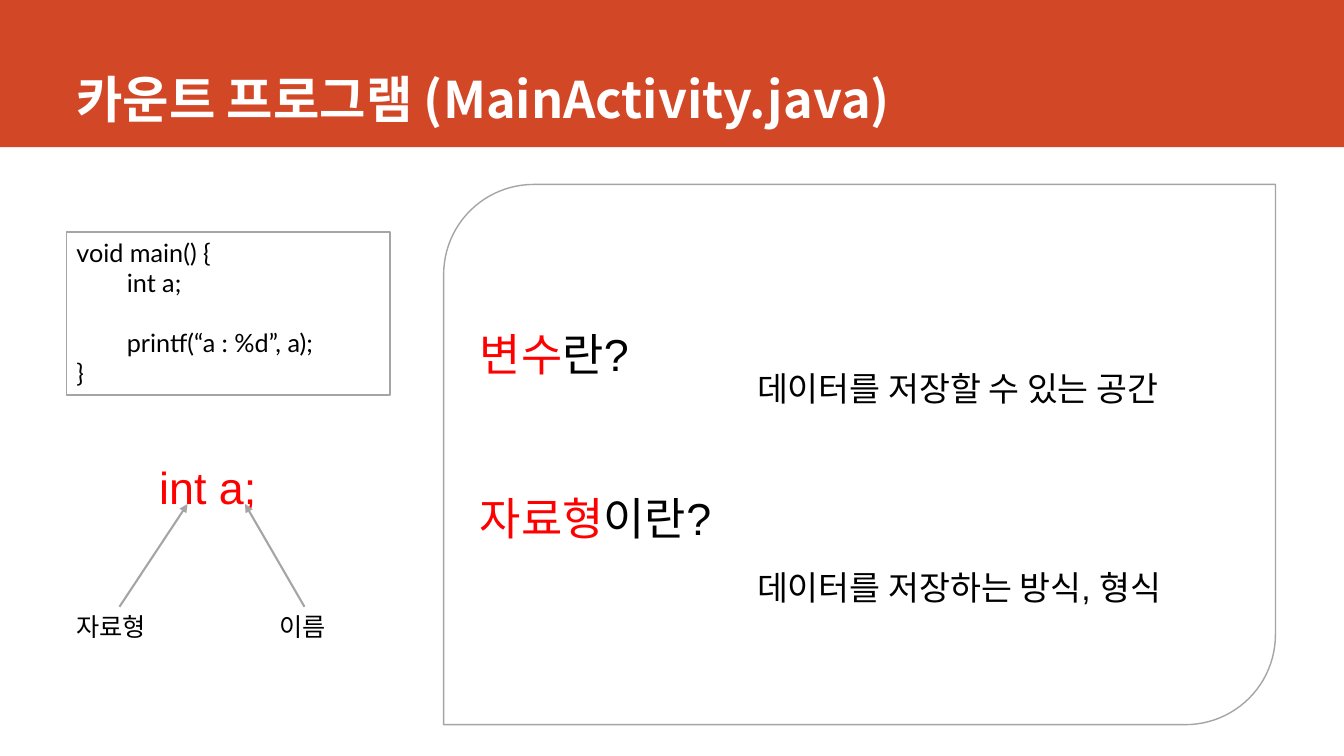
from pptx import Presentation
from pptx.dml.color import RGBColor
from pptx.enum.shapes import MSO_CONNECTOR as Conn, MSO_SHAPE as Kind
from pptx.enum.text import MSO_ANCHOR as Anchor, PP_ALIGN as Align
from pptx.oxml.ns import qn
from pptx.util import Inches, Pt
from lxml.etree import SubElement as Sub

HUES = {"band": "D24726", "white": "FFFFFF", "black": "000000",
        "red": "FF0000", "gray": "A5A5A5"}
KOREAN = "Noto Sans CJK KR"

BAND = (0, 0, 13.33, 1.46)
TITLE = ("카운트 프로그램 (MainActivity.java)", (0.66, 0, 11.76, 1.32))
PANEL = (4.4, 1.83, 8.25, 5.36)
TERMS = [("변수", "란?", 0), ("자료형", "이란?", 79)]
CODE = (0.66, 2.3, 3.21, 1.62)
LINES = [("void main() {", 0, 0), ("int a;", 0.5, 0),
         ("printf(“a : %d”, a);", 0.5, 21.6), ("}", 0, 0)]
NOTES = [("데이터를 저장할 수 있는 공간", (7.41, 3.6, 4.55, 0.91), 24, "black"),
         ("데이터를 저장하는 방식, 형식", (7.41, 5.57, 4.55, 0.91), 24, "black"),
         ("int a;", (1.48, 4.51, 1.58, 0.64), 32, "red")]
PARTS = [("자료형", (0.66, 6.02, 1.05, 0.4), (1.86, 5)),
         ("이름", (2.67, 6.02, 0.7, 0.4), (2.43, 5))]

deck = Presentation()
deck.slide_width, deck.slide_height = Inches(13.33), Inches(7.5)
slide = deck.slides.add_slide(deck.slide_layouts[6])
shapes = slide.shapes


def tint(hue):
    return RGBColor.from_string(HUES[hue])


def add_run(para, text, size, hue, face="Arial", bold=False):
    run = para.add_run()
    run.text = text
    look = {"size": Pt(size), "name": face, "bold": bold}
    for key, value in look.items():
        setattr(run.font, key, value)
    run.font.color.rgb = tint(hue)
    Sub(run.font._element, qn("a:ea"), typeface=KOREAN)


def add_box(kind, area, fill, edge=None):
    box = shapes.add_shape(kind, *map(Inches, area))
    box.shadow.inherit = False
    box.fill.solid()
    box.fill.fore_color.rgb = tint(fill)
    if edge:
        box.line.color.rgb = tint(edge)
        box.line.width = Pt(1)
    else:
        box.line.fill.background()
    return box


def set_frame(box, **look):
    frame = box.text_frame
    for key, value in {"word_wrap": True, **look}.items():
        setattr(frame, key, value)
    return frame


def add_para(frame, first, gap=0, inset=0):
    para = frame.paragraphs[0] if first else frame.add_paragraph()
    para.alignment = Align.LEFT
    para.space_before = Pt(gap)
    if inset:
        props = para._p.get_or_add_pPr()
        props.set("marL", str(Inches(inset)))
        props.set("indent", "0")
    return para


def add_text(text, area, size, hue, anchor=Anchor.TOP, **font):
    box = shapes.add_textbox(*map(Inches, area))
    frame = set_frame(box, vertical_anchor=anchor)
    add_run(add_para(frame, True), text, size, hue, **font)
    return box


def add_arrow(label, tip):
    left, top, width, _ = label.left, label.top, label.width, label.height
    end = [Inches(n) for n in tip]
    arrow = shapes.add_connector(Conn.STRAIGHT, left + width // 2, top, *end)
    arrow.begin_connect(label, 0)
    arrow.line.color.rgb = tint("gray")
    arrow.line.width = Pt(1.5)
    Sub(arrow.line._get_or_add_ln(), qn("a:tailEnd"), type="triangle")
    Sub(arrow._element.spPr, qn("a:effectLst"))


add_box(Kind.RECTANGLE, BAND, "band")
add_text(*TITLE, 36, "white", Anchor.BOTTOM, face=KOREAN, bold=True)

panel = add_box(Kind.ROUND_2_DIAG_RECTANGLE, PANEL, "white", "gray")
frame = set_frame(panel, vertical_anchor=Anchor.MIDDLE,
                  margin_bottom=Inches(0.43))
for i, (term, tail, gap) in enumerate(TERMS):
    para = add_para(frame, i == 0, gap)
    add_run(para, term, 32, "red")
    add_run(para, tail, 32, "black")

for note in NOTES:
    add_text(*note)

code = add_box(Kind.RECTANGLE, CODE, "white", "gray")
frame = set_frame(code, vertical_anchor=Anchor.TOP)
for i, (text, inset, gap) in enumerate(LINES):
    add_run(add_para(frame, i == 0, gap, inset), text, 18, "black", "Lato")

for text, area, tip in PARTS:
    add_arrow(add_text(text, area, 18, "black"), tip)

deck.save("out.pptx")
